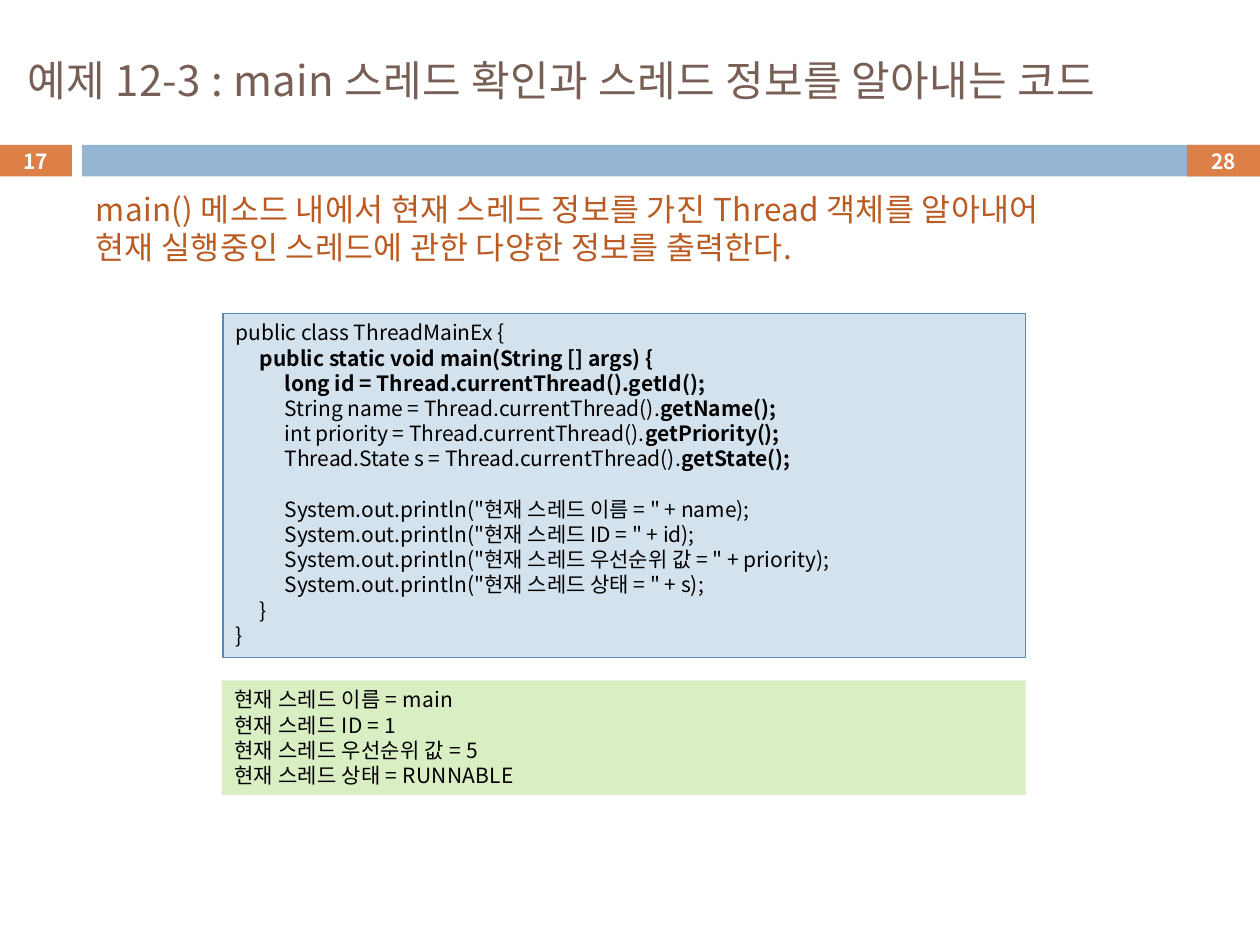
import dataclasses
import typing

import pptx
import pptx.dml.color
import pptx.enum.shapes
import pptx.enum.text
import pptx.oxml
import pptx.util

Inches = pptx.util.Inches
Pt = pptx.util.Pt
Align = pptx.enum.text.PP_ALIGN
Anchor = pptx.enum.text.MSO_ANCHOR

FONT = "Noto Sans CJK KR"
INDENT_STEP = 0.195
COLORS = {
    "orange": "DD8047",
    "blue": "94B6D2",
    "code_fill": "D4E2ED",
    "code_line": "558BB8",
    "result_fill": "DAEEC4",
    "title": "775F55",
    "summary": "B95B22",
    "black": "000000",
    "white": "FFFFFF",
}


class Run(typing.NamedTuple):
    text: str
    bold: bool = False


class Line(typing.NamedTuple):
    runs: list[Run]
    depth: int = 0
    gap_before: float = 0


@dataclasses.dataclass
class Style:
    size: float
    color: str
    pitch: float | None = None
    tracking: float = 0
    align: Align = Align.LEFT
    anchor: Anchor = Anchor.TOP


@dataclasses.dataclass
class Panel:
    place: tuple[float, float, float, float]
    fill: str
    lines: list[Line] = dataclasses.field(default_factory=list)
    style: Style | None = None
    line: str | None = None


CODE = Style(12, "black", 14.4)
RESULT = Style(12, "black", 14.5, 0.15)
NUMBER = Style(11.9, "white", align=Align.CENTER, anchor=Anchor.MIDDLE)
TITLE = Style(24, "title", tracking=0.23, anchor=Anchor.MIDDLE)
SUMMARY = Style(18, "summary", 21.7, 0.17)

CODE_LINES = [
    Line([Run("public class ThreadMainEx {")]),
    Line([Run("public static void main(String [] args) {", True)], 1),
    Line([Run("long id = Thread.currentThread().getId();", True)], 2),
    Line([Run("String name = Thread.currentThread()."), Run("getName();", True)], 2),
    Line([Run("int priority = Thread.currentThread()."), Run("getPriority();", True)], 2),
    Line([Run("Thread.State s = Thread.currentThread()."), Run("getState();", True)], 2),
    Line([Run('System.out.println("현재 스레드 이름 = " + name);')], 2, CODE.pitch),
    Line([Run('System.out.println("현재 스레드 ID = " + id);')], 2),
    Line([Run('System.out.println("현재 스레드 우선순위 값 = " + priority);')], 2),
    Line([Run('System.out.println("현재 스레드 상태 = " + s);')], 2),
    Line([Run("}")], 1),
    Line([Run("}")]),
]
RESULT_LINES = [
    Line([Run(f"현재 스레드 {label} = {value}")])
    for label, value in [
        ("이름", "main"), ("ID", "1"), ("우선순위 값", "5"), ("상태", "RUNNABLE"),
    ]
]
PANELS = [
    Panel((-0.01, 1.15, 0.58, 0.25), "orange", [Line([Run("17", True)])], NUMBER),
    Panel((0.65, 1.15, 9.35, 0.25), "blue"),
    Panel((9.42, 1.15, 0.58, 0.25), "orange", [Line([Run("28", True)])], NUMBER),
    Panel((1.77, 2.49, 6.37, 2.73), "code_fill", CODE_LINES, CODE, "code_line"),
    Panel((1.76, 5.4, 6.38, 0.91), "result_fill", RESULT_LINES, RESULT),
]


def rgb(name: str) -> pptx.dml.color.RGBColor:
    return pptx.dml.color.RGBColor.from_string(COLORS[name])


def apply(target: typing.Any, values: dict[str, typing.Any]) -> None:
    for name, value in values.items():
        setattr(target, name, value)


def place_box(box: typing.Any, place: tuple[float, float, float, float]) -> None:
    apply(box, dict(zip(("left", "top", "width", "height"), map(Inches, place))))


def add_child(parent: typing.Any, tag: str, **attributes: str) -> None:
    child = pptx.oxml.parse_xml(
        f'<a:{tag} xmlns:a="http://schemas.openxmlformats.org/drawingml/2006/main"/>')
    for name, value in attributes.items():
        child.set(name, value)
    parent.append(child)


def write_lines(box: typing.Any, lines: list[Line], style: Style) -> None:
    frame = box.text_frame
    apply(frame, {
        "word_wrap": True,
        "auto_size": pptx.enum.text.MSO_AUTO_SIZE.NONE,
        "vertical_anchor": style.anchor,
        "margin_left": Inches(0.1), "margin_right": Inches(0.1),
        "margin_top": Inches(0.05), "margin_bottom": Inches(0.05),
    })
    for index, line in enumerate(lines):
        para = frame.add_paragraph() if index else frame.paragraphs[0]
        apply(para, {"alignment": style.align, "space_before": Pt(line.gap_before)})
        if style.pitch:
            para.line_spacing = Pt(style.pitch)
        properties = para._p.get_or_add_pPr()
        properties.set("marL", str(Inches(INDENT_STEP * line.depth)))
        properties.set("indent", "0")
        add_child(properties, "buNone")
        for run in line.runs:
            span = para.add_run()
            span.text = run.text
            apply(span.font, {"size": Pt(style.size), "bold": run.bold, "name": FONT})
            span.font.color.rgb = rgb(style.color)
            run_properties = span._r.get_or_add_rPr()
            add_child(run_properties, "ea", typeface=FONT)
            if style.tracking:
                run_properties.set("spc", str(round(style.tracking * 100)))


def draw_panel(page: typing.Any, panel: Panel) -> None:
    box = page.shapes.add_shape(
        pptx.enum.shapes.MSO_SHAPE.RECTANGLE, *map(Inches, panel.place))
    box.shadow.inherit = False
    box.fill.solid()
    box.fill.fore_color.rgb = rgb(panel.fill)
    if panel.line:
        box.line.color.rgb = rgb(panel.line)
        box.line.width = Pt(0.75)
    else:
        box.line.fill.background()
    if panel.style:
        write_lines(box, panel.lines, panel.style)


def main() -> None:
    deck = pptx.Presentation()
    apply(deck, {"slide_width": Inches(10), "slide_height": Inches(7.5)})
    page = deck.slides.add_slide(deck.slide_layouts[1])
    for panel in PANELS:
        draw_panel(page, panel)
    title, summary = page.shapes.title, page.placeholders[1]
    place_box(title, (0.12, 0.26, 9.47, 0.74))
    write_lines(title, [Line([Run("예제 12-3 : main 스레드 확인과 스레드 정보를 알아내는 코드")])], TITLE)
    place_box(summary, (0.66, 1.46, 8.19, 0.71))
    write_lines(summary, [Line([Run(
        "main() 메소드 내에서 현재 스레드 정보를 가진 Thread 객체를 알아내어 "
        "현재 실행중인 스레드에 관한 다양한 정보를 출력한다.")])], SUMMARY)
    deck.save("out.pptx")


if __name__ == "__main__":
    main()
